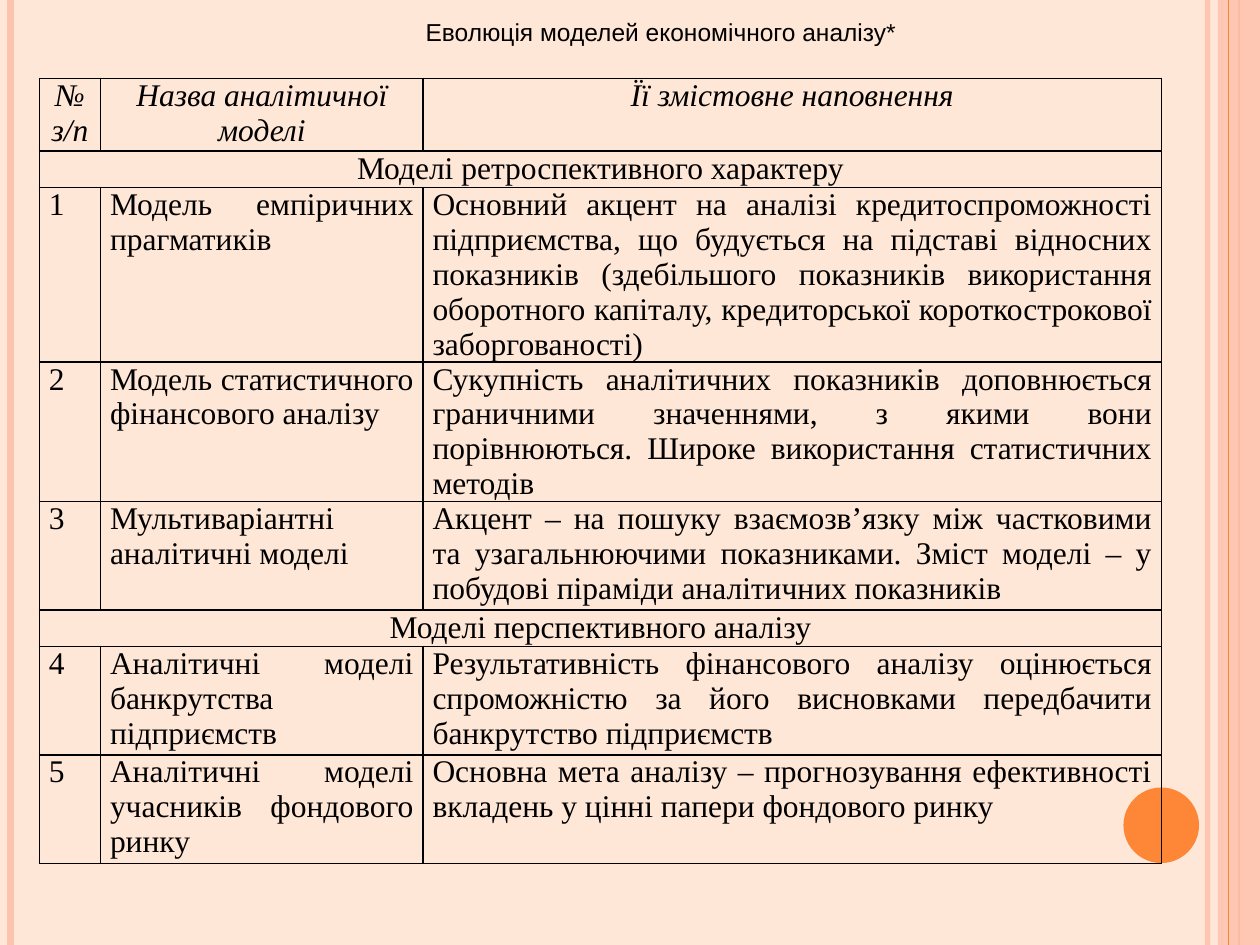
from lxml import etree
from pptx import Presentation
from pptx import util as u
from pptx.dml.color import RGBColor
from pptx.enum import shapes, text
from pptx.oxml.ns import qn

Pt = u.Pt
PAPER = RGBColor(0xFF, 0xE7, 0xD7)
PEACH = RGBColor(0xFE, 0xC3, 0xAE)
ORANGE = RGBColor(0xFE, 0x86, 0x37)
BLACK = RGBColor(0, 0, 0)

PAGE_WIDTH, PAGE_HEIGHT = 720, 540
COLUMN_WIDTHS = [35, 184.3, 422]
ROW_HEIGHTS = [41.6, 20.8, 98.6, 62, 62, 20.8, 62, 62]
HEADINGS = ["№\nз/п", "Назва аналітичної моделі", "Її змістовне наповнення"]
MODEL_GROUPS = [
    ("Моделі ретроспективного характеру", [
        ("Модель емпіричних прагматиків",
         "Основний акцент на аналізі кредитоспроможності підприємства, що будується "
         "на підставі відносних показників (здебільшого показників використання "
         "оборотного капіталу, кредиторської короткострокової заборгованості)"),
        ("Модель статистичного фінансового аналізу",
         "Сукупність аналітичних показників доповнюється граничними значеннями, з якими "
         "вони порівнюються. Широке використання статистичних методів"),
        ("Мультиваріантні аналітичні моделі",
         "Акцент – на пошуку взаємозв’язку між частковими та узагальнюючими показниками. "
         "Зміст моделі – у побудові піраміди аналітичних показників"),
    ]),
    ("Моделі перспективного аналізу", [
        ("Аналітичні моделі банкрутства підприємств",
         "Результативність фінансового аналізу оцінюється спроможністю за його "
         "висновками передбачити банкрутство підприємств"),
        ("Аналітичні моделі учасників фондового ринку",
         "Основна мета аналізу – прогнозування ефективності вкладень у цінні папери "
         "фондового ринку"),
    ]),
]


def write_text(frame, content, font="Times New Roman", size=18, italic=False,
               align=text.PP_ALIGN.JUSTIFY, indent=0):
    frame.text = content
    for paragraph in frame.paragraphs:
        paragraph.alignment = align
        if indent:
            paragraph._p.get_or_add_pPr().set("indent", str(Pt(indent)))
        for run in paragraph.runs:
            run.font.name = font
            run.font.size = Pt(size)
            run.font.italic = italic
            run.font.color.rgb = BLACK


def set_opacity(fill_owner, percent):
    color = fill_owner.find(".//" + qn("a:srgbClr"))
    etree.SubElement(color, qn("a:alpha"), val=str(percent * 1000))


def add_stripe(slide, x, width, color, opacity=100):
    stripe = slide.shapes.add_connector(
        shapes.MSO_CONNECTOR.STRAIGHT, Pt(x), Pt(0), Pt(x), Pt(PAGE_HEIGHT))
    stripe.line.width = Pt(width)
    stripe.line.color.rgb = color
    properties = stripe._element.spPr
    if opacity < 100:
        set_opacity(properties, opacity)
    etree.SubElement(properties, qn("a:effectLst"))


def add_block(slide, kind, left, top, width, height, color, opacity=100):
    block = slide.shapes.add_shape(kind, Pt(left), Pt(top), Pt(width), Pt(height))
    block.shadow.inherit = False
    block.fill.solid()
    block.fill.fore_color.rgb = color
    block.line.fill.background()
    if opacity < 100:
        set_opacity(block._element.spPr, opacity)


def add_decor(slide):
    add_stripe(slide, 690, 3, PEACH, opacity=93)
    add_stripe(slide, 6, 4.5, PEACH)
    add_stripe(slide, 708, 1.5, ORANGE)
    add_block(slide, shapes.MSO_SHAPE.RECTANGLE, 696, 0, 24, PAGE_HEIGHT, PEACH, opacity=87)
    add_stripe(slide, 702, 0.75, ORANGE)
    add_block(slide, shapes.MSO_SHAPE.OVAL, 642, 450, 43.2, 43.2, ORANGE)


def style_cell(cell):
    cell.margin_left = cell.margin_right = Pt(5.4)
    cell.margin_top = cell.margin_bottom = Pt(0)
    properties = cell._tc.get_or_add_tcPr()
    for side in ("lnL", "lnR", "lnT", "lnB"):
        border = etree.SubElement(properties, qn(f"a:{side}"), w=str(Pt(1)))
        paint = etree.SubElement(border, qn("a:solidFill"))
        etree.SubElement(paint, qn("a:srgbClr"), val=str(BLACK))
    cell.fill.background()


def add_models_table(slide):
    models = slide.shapes.add_table(
        len(ROW_HEIGHTS), len(COLUMN_WIDTHS), Pt(22.5), Pt(44.8),
        Pt(sum(COLUMN_WIDTHS)), Pt(sum(ROW_HEIGHTS))).table
    models.first_row = models.horz_banding = False
    for column, width in zip(models.columns, COLUMN_WIDTHS):
        column.width = Pt(width)
    for row, height in zip(models.rows, ROW_HEIGHTS):
        row.height = Pt(height)
    for cell in models.iter_cells():
        style_cell(cell)

    center = text.PP_ALIGN.CENTER
    for column, heading in enumerate(HEADINGS):
        write_text(models.cell(0, column).text_frame, heading, italic=True, align=center)
    row, number = 1, 1
    for group, entries in MODEL_GROUPS:
        models.cell(row, 0).merge(models.cell(row, 2))
        write_text(models.cell(row, 0).text_frame, group, align=center)
        row += 1
        for name, meaning in entries:
            for column, content in enumerate((str(number), name, meaning)):
                write_text(models.cell(row, column).text_frame, content)
            row, number = row + 1, number + 1


def add_title(slide):
    frame = slide.shapes.add_textbox(Pt(0), Pt(0), Pt(PAGE_WIDTH), Pt(36)).text_frame
    frame.word_wrap = True
    frame.vertical_anchor = text.MSO_ANCHOR.MIDDLE
    write_text(frame, "Еволюція моделей економічного аналізу*", font="Arial", size=14,
               align=text.PP_ALIGN.CENTER, indent=35.4)


def main():
    deck = Presentation()
    deck.slide_width, deck.slide_height = Pt(PAGE_WIDTH), Pt(PAGE_HEIGHT)
    slide = deck.slides.add_slide(deck.slide_layouts[6])
    slide.background.fill.solid()
    slide.background.fill.fore_color.rgb = PAPER
    add_decor(slide)
    add_models_table(slide)
    add_title(slide)
    deck.save("out.pptx")


if __name__ == "__main__":
    main()
